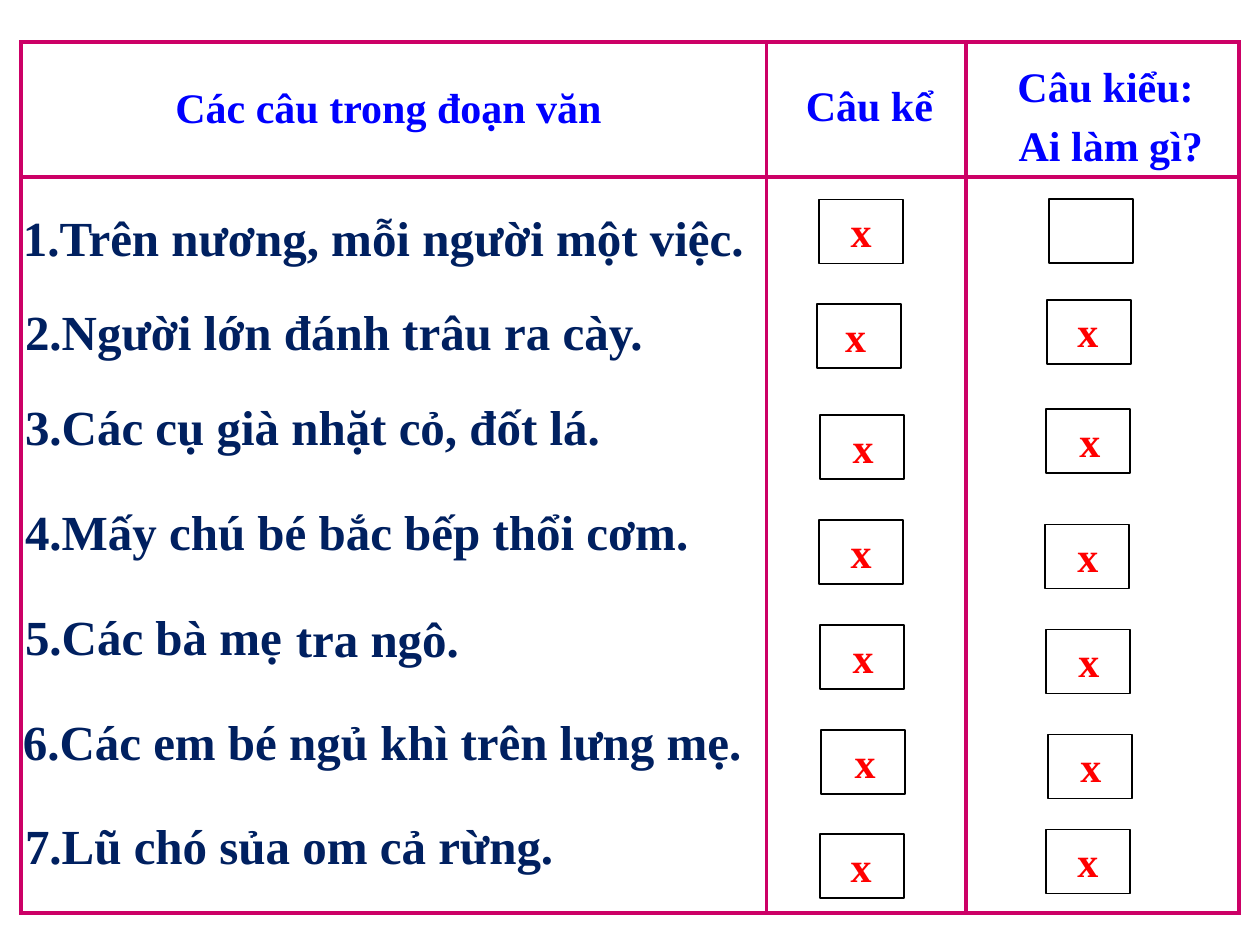
from pptx import Presentation
from pptx.dml.color import RGBColor
from pptx.enum.shapes import MSO_SHAPE
from pptx.enum.text import MSO_ANCHOR, PP_ALIGN
from pptx.oxml import parse_xml
from pptx.oxml.ns import nsdecls
from pptx.util import Inches, Pt

COLORS = {"rule": "CC0066", "head": "0000FF", "body": "002060", "mark": "FF0000", "edge": "000000"}
FONT = "Times New Roman"
COLS, ROWS = (71, 19, 26), (12.85, 70.1)
LEFT, TOP = 2, 4
SENTENCES = [
    (-1, 2.3, "1.Trên nương, mỗi người một việc."),
    (-0.8, 11.3, "2.Người lớn đánh trâu ra cày."),
    (-0.8, 20.3, "3.Các cụ già nhặt cỏ, đốt lá."),
    (-0.8, 30.3, "4.Mấy chú bé bắc bếp thổi cơm."),
    (-0.8, 40.3, "5.Các bà mẹ"),
    (25, 40.5, "tra ngô."),
    (-1, 50.3, "6.Các em bé ngủ khì trên lưng mẹ."),
    (-0.8, 60.2, "7.Lũ chó sủa om cả rừng."),
]
TELLING = [
    (5, 2.15, 5), (4.8, 12.1, 4.5), (5.1, 22.7, 5.2), (5, 32.7, 5),
    (5.1, 42.7, 5.2), (5.2, 52.7, 5.4), (5.1, 62.6, 5),
]
DOING = [
    (7.9, 2.1, None), (7.7, 11.7, 7.6), (7.6, 22.1, 7.8), (7.5, 33.1, 7.6),
    (7.6, 43.1, 7.7), (7.8, 53.1, 7.9), (7.6, 62.15, 7.6),
]


def grid(*cells):
    """Turn grid cells, twelve to the inch, into lengths."""
    return [Inches(cell / 12) for cell in cells]


def write(frame, lines, size, color, align=PP_ALIGN.LEFT):
    """Fill a text frame with one paragraph per line."""
    for index, line in enumerate(lines):
        para = frame.add_paragraph() if index else frame.paragraphs[0]
        para.alignment = align
        if index:
            para.space_before = Pt(size * 0.2)
        run = para.add_run()
        run.text = line
        run.font.name, run.font.size, run.font.bold = FONT, Pt(size), True
        run.font.color.rgb = RGBColor.from_string(COLORS[color])


def label(slide, place, lines, size, color, align=PP_ALIGN.LEFT, wrap=True):
    """Place a text box on the grid."""
    frame = slide.shapes.add_textbox(*grid(*place)).text_frame
    frame.word_wrap = wrap
    write(frame, lines, size, color, align)


def border(cell):
    """Rule all four sides of a table cell."""
    props = cell._tc.get_or_add_tcPr()
    for index, side in enumerate(("lnL", "lnR", "lnT", "lnB")):
        props.insert(index, parse_xml(
            f'<a:{side} {nsdecls("a")} w="{Pt(2.25)}"><a:solidFill>'
            f'<a:srgbClr val="{COLORS["rule"]}"/></a:solidFill></a:{side}>'))


def frame_table(slide, box):
    """Draw the ruled table with its first heading."""
    table = slide.shapes.add_table(len(ROWS), len(COLS), *grid(*box)).table
    table.first_row = table.horz_banding = False
    for col, width in zip(table.columns, grid(*COLS)):
        col.width = width
    for row, height in zip(table.rows, grid(*ROWS)):
        row.height = height
    for cell in table.iter_cells():
        cell.fill.background()
        border(cell)
    first = table.cell(0, 0)
    first.vertical_anchor = MSO_ANCHOR.MIDDLE
    write(first.text_frame, ["Các câu trong đoạn văn "], 24, "head", PP_ALIGN.CENTER)


def headings(slide, tell, act):
    """Write the headings of the two answer columns."""
    for (x, y), (dx, dy, w, h), lines in (
        (tell, (2.5, 3, 14.6, 6.1), ["Câu kể"]),
        (act, (3.6, 1.15, 20.4, 11.9), ["Câu kiểu: ", "Ai làm gì?"]),
    ):
        label(slide, (x + dx, y + dy, w, h), lines, 24, "head", PP_ALIGN.CENTER, False)


def sentences(slide, box):
    """List the sentences down the first column."""
    x, y, w, h = box
    for dx, dy, text in SENTENCES:
        label(slide, (x + dx, y + dy, w + 1 - dx, 6.8), [text], 28, "body")


def answers(slide, spot, marks):
    """Draw a column of answer boxes and their crosses."""
    x, y = spot
    for dx, dy, cross in marks:
        shape = slide.shapes.add_shape(MSO_SHAPE.RECTANGLE, *grid(x + dx, y + dy, 8, 6.1))
        shape.shadow.inherit = False
        shape.fill.background()
        shape.line.color.rgb = RGBColor.from_string(COLORS["edge"])
        shape.line.width = Pt(1)
        if cross is not None:
            label(slide, (x + cross, y + dy, 8, 6.1), ["x"], 24, "mark", PP_ALIGN.CENTER)


def main():
    """Build the slide and save it."""
    deck = Presentation()
    deck.slide_width, deck.slide_height = grid(120, 90)
    slide = deck.slides.add_slide(deck.slide_layouts[6])
    tell = LEFT + COLS[0]
    act = tell + COLS[1]
    body = TOP + ROWS[0]
    frame_table(slide, (LEFT, TOP, sum(COLS), sum(ROWS)))
    headings(slide, (tell, TOP), (act, TOP))
    sentences(slide, (LEFT, body, COLS[0], ROWS[1]))
    answers(slide, (tell, body), TELLING)
    answers(slide, (act, body), DOING)
    deck.save("out.pptx")


if __name__ == "__main__":
    main()
